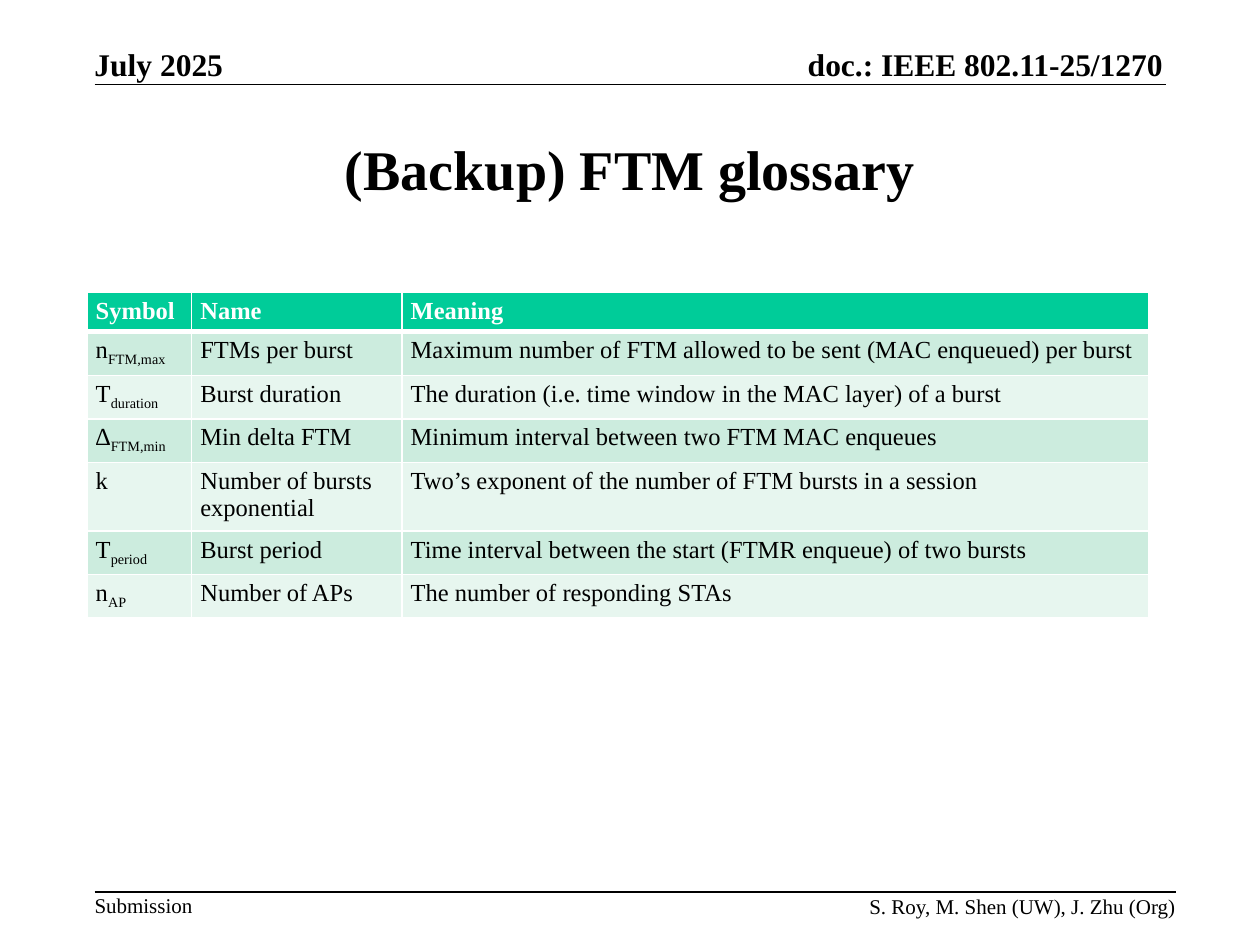
"""Build the FTM glossary slide."""
from dataclasses import dataclass

from lxml.etree import SubElement
from pptx import Presentation
from pptx.dml.color import RGBColor as Color
from pptx.enum.shapes import MSO_CONNECTOR as Connector
from pptx.enum.text import MSO_ANCHOR as Anchor, PP_ALIGN as Align
from pptx.oxml import parse_xml
from pptx.oxml.ns import nsdecls, qn
from pptx.util import Inches, Pt


@dataclass(frozen=True)
class Theme:
    font: str = "Times New Roman"
    ink: str = "000000"
    paper: str = "FFFFFF"
    head: str = "00CC99"
    bands: tuple = ("CCECDE", "E7F6EF")
    title: int = 32
    header: int = 18
    table: int = 14
    footer: int = 12


THEME = Theme()
WIDTH, HEIGHT = 10, 7.5
LEFT, RIGHT, FOOT_RIGHT = 0.075 * WIDTH, 0.925 * WIDTH, 0.933 * WIDTH
HEADER_RULE, FOOTER_RULE = 0.67, 7.08
COLUMNS = (0.83, 1.67, 5.93)
ROW, TALL_ROW = 0.3, 0.53

HEADINGS = ("Symbol", "Name", "Meaning")
GLOSSARY = (
    ("n", "FTM,max", "FTMs per burst",
     "Maximum number of FTM allowed to be sent (MAC enqueued) per burst"),
    ("T", "duration", "Burst duration",
     "The duration (i.e. time window in the MAC layer) of a burst"),
    ("∆", "FTM,min", "Min delta FTM",
     "Minimum interval between two FTM MAC enqueues"),
    ("k", "", "Number of bursts exponential",
     "Two’s exponent of the number of FTM bursts in a session"),
    ("T", "period", "Burst period",
     "Time interval between the start (FTMR enqueue) of two bursts"),
    ("n", "AP", "Number of APs", "The number of responding STAs"),
)


def style(para, size, color=THEME.ink, bold=False):
    """Set the font of a paragraph."""
    font = para.font
    font.name, font.size, font.bold = THEME.font, Pt(size), bold
    font.color.rgb = Color.from_string(color)


def add_text(page, text, place, size, align=Align.LEFT, anchor=Anchor.TOP, bold=False):
    """Add a one-paragraph text box without insets."""
    frame = page.shapes.add_textbox(*map(Inches, place)).text_frame
    frame.word_wrap, frame.vertical_anchor = True, anchor
    frame.margin_left = frame.margin_right = frame.margin_top = frame.margin_bottom = 0
    para = frame.paragraphs[0]
    para.text, para.alignment = text, align
    style(para, size, bold=bold)


def add_rule(page, right, top):
    """Add a thin horizontal rule from the left margin."""
    ends = map(Inches, (LEFT, top, right, top))
    rule = page.shapes.add_connector(Connector.STRAIGHT, *ends)
    rule.line.width = Pt(1)
    rule.line.color.rgb = Color.from_string(THEME.ink)
    SubElement(rule._element.spPr, qn("a:effectLst"))


def set_borders(cell, top=1, bottom=1):
    """Draw paper-coloured borders around a cell."""
    widths = {"lnL": 1, "lnR": 1, "lnT": top, "lnB": bottom}
    properties = cell._tc.get_or_add_tcPr()
    for order, (side, width) in enumerate(widths.items()):
        properties.insert(order, parse_xml(
            f'<a:{side} {nsdecls("a")} w="{Pt(width)}"><a:solidFill>'
            f'<a:srgbClr val="{THEME.paper}"/></a:solidFill></a:{side}>'))


def fill_cell(cell, text, fill, color=THEME.ink, bold=False, subscript=""):
    """Write a cell's text, optional subscript and background."""
    cell.margin_left = cell.margin_right = Inches(0.07)
    cell.margin_top = cell.margin_bottom = Inches(0.04)
    cell.fill.solid()
    cell.fill.fore_color.rgb = Color.from_string(fill)
    para = cell.text_frame.paragraphs[0]
    style(para, THEME.table, color, bold)
    para.add_run().text = text
    if subscript:
        span = para.add_run()
        span.text = subscript
        span._r.get_or_add_rPr().set("baseline", "-25000")


def add_glossary(page):
    """Add the glossary table with banded rows."""
    heights = [ROW] + [ROW if subscript else TALL_ROW for _, subscript, *_ in GLOSSARY]
    place = map(Inches, (0.69, 2.32, sum(COLUMNS), sum(heights)))
    table = page.shapes.add_table(len(heights), len(COLUMNS), *place).table
    for column, width in zip(table.columns, COLUMNS):
        column.width = Inches(width)
    for row, height in zip(table.rows, heights):
        row.height = Inches(height)
    for column, heading in enumerate(HEADINGS):
        cell = table.cell(0, column)
        fill_cell(cell, heading, THEME.head, THEME.paper, bold=True)
        set_borders(cell, bottom=3)
    for row, (symbol, subscript, name, meaning) in enumerate(GLOSSARY, 1):
        for column, text in enumerate((symbol, name, meaning)):
            cell = table.cell(row, column)
            fill_cell(cell, text, THEME.bands[(row - 1) % 2],
                      subscript="" if column else subscript)
            set_borders(cell, top=3 if row == 1 else 1)


def main():
    """Build and save the slide."""
    deck = Presentation()
    deck.slide_width, deck.slide_height = Inches(WIDTH), Inches(HEIGHT)
    page = deck.slides.add_slide(deck.slide_layouts[6])
    add_text(page, "doc.: IEEE 802.11-25/1270", (5.88, 0.36, 3.35, 0.3),
             THEME.header, Align.RIGHT, Anchor.BOTTOM, bold=True)
    add_rule(page, RIGHT, HEADER_RULE)
    add_text(page, "Submission", (LEFT, FOOTER_RULE, 0.85, 0.2), THEME.footer)
    add_rule(page, FOOT_RIGHT, FOOTER_RULE)
    add_text(page, "July 2025", (LEFT, 0.36, 1.1, 0.3),
             THEME.header, anchor=Anchor.BOTTOM, bold=True)
    add_text(page, "S. Roy, M. Shen (UW), J. Zhu (Org)",
             (FOOT_RIGHT - 2.6, 7.09, 2.6, 0.2), THEME.footer, Align.RIGHT)
    add_text(page, "(Backup) FTM glossary", (LEFT, 0.1 * HEIGHT, RIGHT - LEFT, 1.17),
             THEME.title, Align.CENTER, Anchor.MIDDLE, bold=True)
    add_glossary(page)
    deck.save("out.pptx")


if __name__ == "__main__":
    main()
